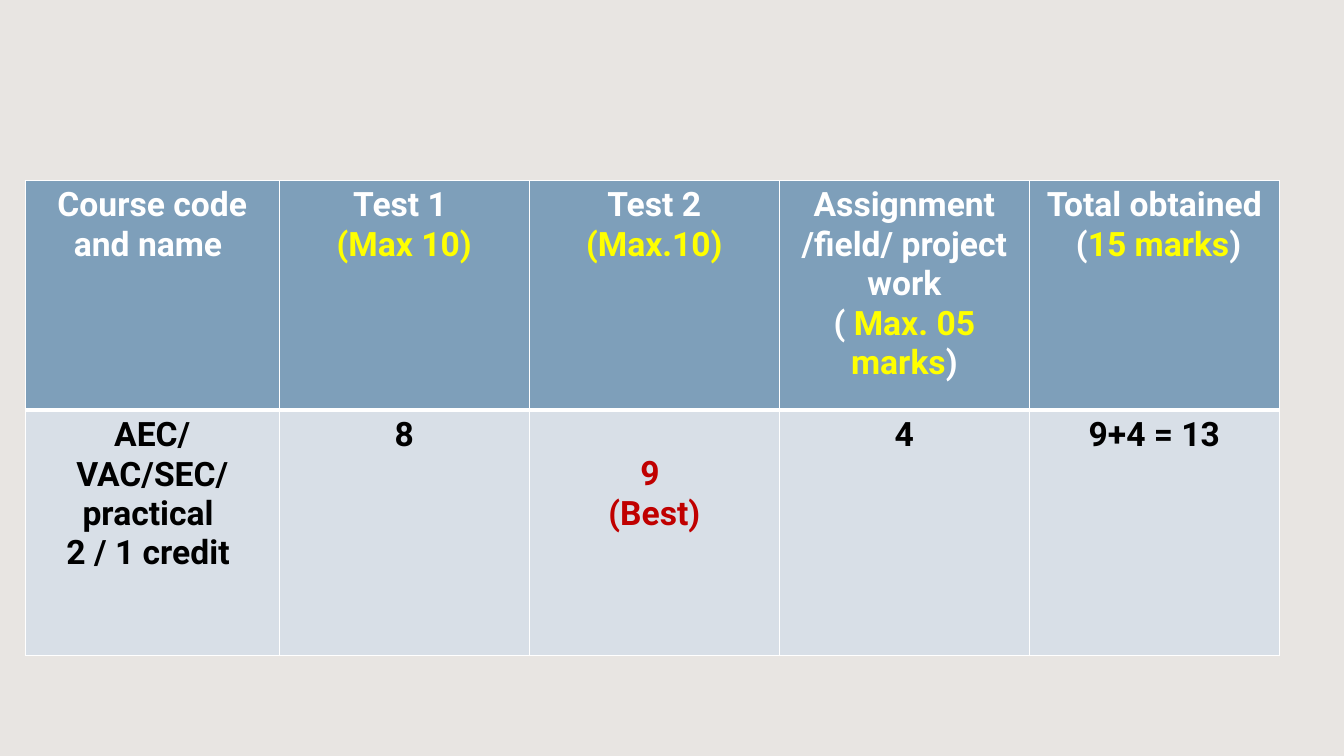
from lxml.etree import SubElement
from pptx import Presentation
from pptx.dml.color import RGBColor
from pptx.enum.text import PP_ALIGN
from pptx.oxml.ns import qn
from pptx.util import Inches, Pt

BACKGROUND = RGBColor(0xE8, 0xE5, 0xE2)
HEADER_FILL = RGBColor(0x7E, 0x9F, 0xBA)
BODY_FILL = RGBColor(0xD8, 0xDF, 0xE7)
WHITE = RGBColor(0xFF, 0xFF, 0xFF)
YELLOW = RGBColor(0xFF, 0xFF, 0x00)
BLACK = RGBColor(0x00, 0x00, 0x00)
RED = RGBColor(0xC0, 0x00, 0x00)

COLUMN_WIDTHS = [2.52, 2.48, 2.48, 2.48, 2.48]
ROW_HEIGHTS = [2.28, 2.43]
CELL_MARGIN = 0.05
LINE_HEIGHT = 0.39

HEADER = [
    [[("Course code and name ", WHITE)]],
    [[("Test 1 ", WHITE)], [("(Max 10)", YELLOW)]],
    [[("Test 2", WHITE)], [("(Max.10)", YELLOW)]],
    [[("Assignment /field/ project work", WHITE)],
     [("( ", WHITE), ("Max. 05 marks", YELLOW), (")", WHITE)]],
    [[("Total obtained", WHITE)],
     [(" (", WHITE), ("15 marks", YELLOW), (")", WHITE)]],
]
RESULTS = [
    [[("AEC/ VAC/SEC/ practical ", BLACK)], [("2 / 1 credit ", BLACK)]],
    [[("8", BLACK)]],
    [[("9 ", RED)], [("(Best)", RED)]],
    [[("4", BLACK)]],
    [[("9+4 = 13", BLACK)]],
]
ROWS = [(HEADER, HEADER_FILL, 1, 3), (RESULTS, BODY_FILL, 3, 1)]


def add_borders(cell, top, bottom):
    properties = cell._tc.get_or_add_tcPr()
    widths = [("a:lnL", 1), ("a:lnR", 1), ("a:lnT", top), ("a:lnB", bottom)]
    for position, (tag, width) in enumerate(widths):
        line = SubElement(properties, qn(tag), w=str(Pt(width)))
        fill = SubElement(line, qn("a:solidFill"))
        SubElement(fill, qn("a:srgbClr"), val=str(WHITE))
        properties.insert(position, line)


def write_cell(cell, paragraphs):
    frame = cell.text_frame
    for index, runs in enumerate(paragraphs):
        paragraph = frame.add_paragraph() if index else frame.paragraphs[0]
        paragraph.alignment = PP_ALIGN.CENTER
        for text, color in runs:
            run = paragraph.add_run()
            run.text = text
            run.font.name = "Roboto"
            run.font.size = Pt(24)
            run.font.bold = True
            run.font.color.rgb = color


def add_marks_table(slide, left, top, width, height):
    frame = slide.shapes.add_table(
        len(ROWS), len(COLUMN_WIDTHS),
        Inches(left), Inches(top), Inches(width), Inches(height))
    table = frame.table
    for column, column_width in zip(table.columns, COLUMN_WIDTHS):
        column.width = Inches(column_width)
    for row, row_height in zip(table.rows, ROW_HEIGHTS):
        row.height = Inches(row_height)
    for row, (contents, fill, top_line, bottom_line) in zip(table.rows, ROWS):
        for cell, paragraphs in zip(row.cells, contents):
            cell.fill.solid()
            cell.fill.fore_color.rgb = fill
            add_borders(cell, top_line, bottom_line)
            write_cell(cell, paragraphs)
    best_cell = table.cell(1, 2)
    best_cell.margin_top = Inches(CELL_MARGIN + LINE_HEIGHT)


def main():
    presentation = Presentation()
    presentation.slide_width = Inches(13.33)
    presentation.slide_height = Inches(7.5)
    slide = presentation.slides.add_slide(presentation.slide_layouts[6])
    slide.background.fill.solid()
    slide.background.fill.fore_color.rgb = BACKGROUND
    add_marks_table(slide, 0.25, 1.79, sum(COLUMN_WIDTHS), sum(ROW_HEIGHTS))
    presentation.save("out.pptx")


if __name__ == "__main__":
    main()
